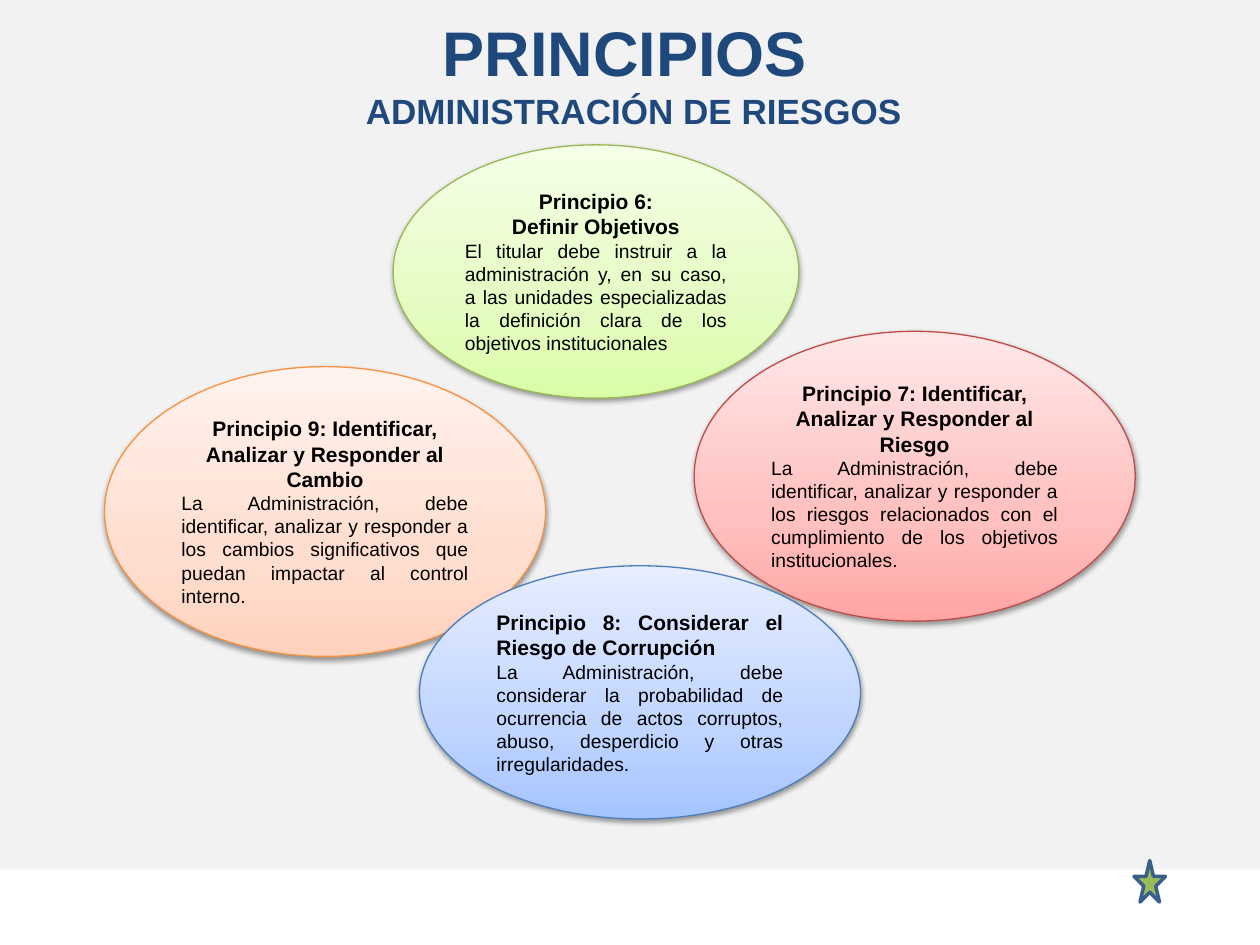
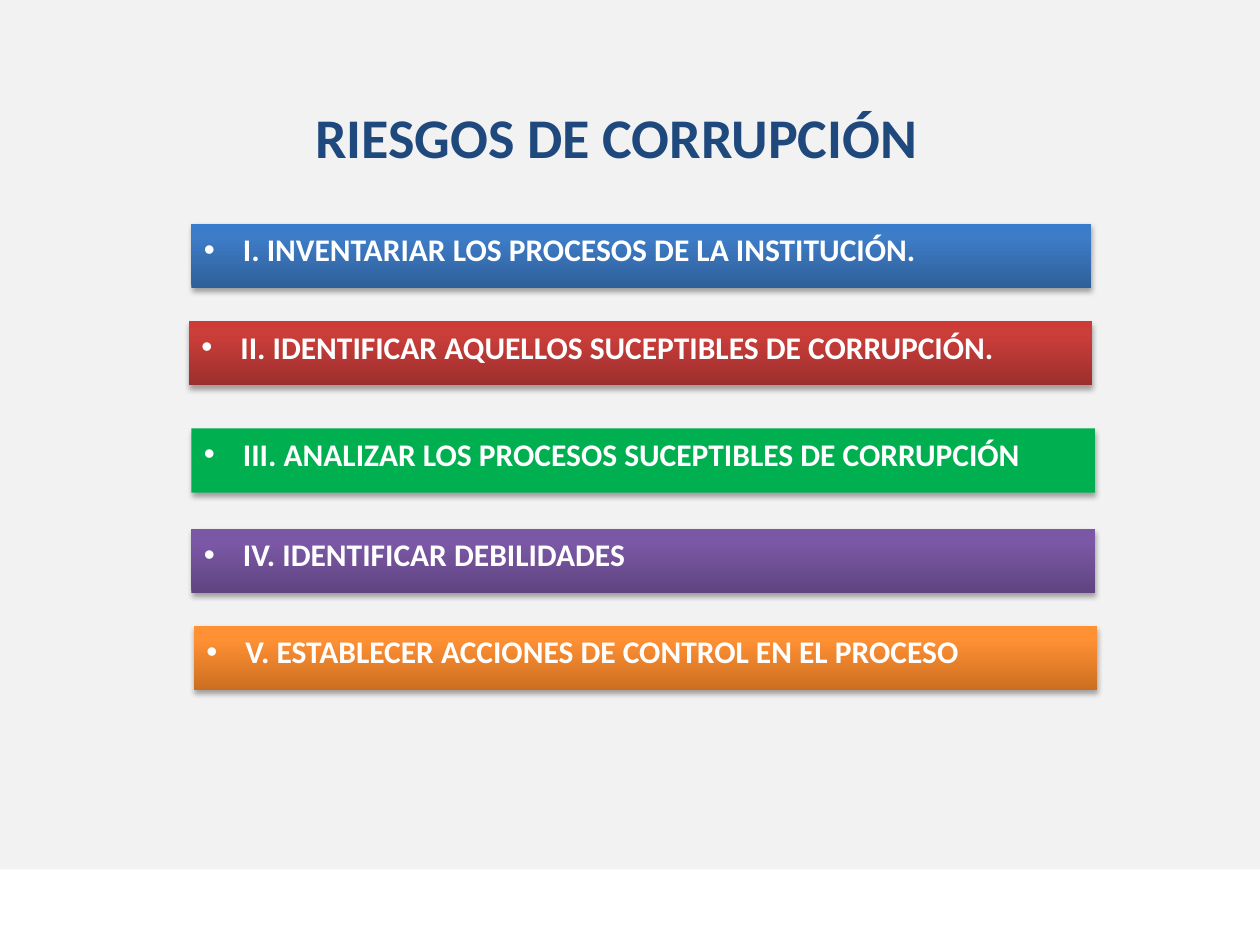
from lxml import etree
from pptx import Presentation
from pptx.dml.color import RGBColor
from pptx.enum import shapes, text
from pptx.oxml import ns
from pptx.util import Inches, Pt

COLORS = {
    "band": "F2F2F2", "title": "1F497D", "black": "000000", "white": "FFFFFF",
    "star": "9BBB59", "star_line": "3A5F8C", "green_bar": "00B050",
}
CENTER, LEFT, JUSTIFY = text.PP_ALIGN.CENTER, text.PP_ALIGN.LEFT, text.PP_ALIGN.JUSTIFY


def paint(shape, stops, shadow=None):
    """Fill with one colour or (percent, colour) stops; shadow is (opacity %, distance pt)."""
    if isinstance(stops, str):
        shape.fill.solid()
        shape.fill.fore_color.rgb = RGBColor.from_string(stops)
    else:
        shape.fill.gradient()
        shape.fill.gradient_angle = 90
        stop_list = shape.element.spPr.find(".//" + ns.qn("a:gsLst"))
        for old_stop in list(stop_list):
            stop_list.remove(old_stop)
        for percent, color in stops:
            stop = etree.SubElement(stop_list, ns.qn("a:gs"), pos=str(percent * 1000))
            etree.SubElement(stop, ns.qn("a:srgbClr"), val=color)
    shape.line.fill.background()
    shape.shadow.inherit = False
    if shadow:
        opacity, distance = shadow
        effects = shape.element.spPr.find(ns.qn("a:effectLst"))
        outer = etree.SubElement(effects, ns.qn("a:outerShdw"), blurRad=str(Pt(3.1)),
                                 dist=str(Pt(distance)), dir="5400000", rotWithShape="0")
        shade = etree.SubElement(outer, ns.qn("a:srgbClr"), val=COLORS["black"])
        etree.SubElement(shade, ns.qn("a:alpha"), val=str(opacity * 1000))


def write(shape, lines, font, color, anchor):
    """Write one paragraph for each (wording, size, bold, alignment)."""
    frame = shape.text_frame
    frame.word_wrap = True
    frame.auto_size = text.MSO_AUTO_SIZE.NONE
    frame.vertical_anchor = anchor
    for index, (wording, size, bold, alignment) in enumerate(lines):
        para = frame.add_paragraph() if index else frame.paragraphs[0]
        para.alignment = alignment
        span = para.add_run()
        span.text = wording
        span.font.name, span.font.size, span.font.bold = font, Pt(size), bold
        span.font.color.rgb = RGBColor.from_string(color)


deck = Presentation()
deck.slide_width, deck.slide_height = Inches(10), Inches(7.5)
title_only = deck.slide_layouts[5]

# Slide 1: principles
page = deck.slides.add_slide(title_only)

# The grey band belongs to the master, behind every slide
band = page.shapes.add_shape(shapes.MSO_SHAPE.RECTANGLE, 0, 0, Inches(10), Inches(6.9))
paint(band, COLORS["band"])
deck.slide_master.shapes.element.insert(2, band.element)

title = page.shapes.title
title.left, title.top, title.width, title.height = map(Inches, (0.18, 0.05, 9.7, 1.04))
write(title, [("PRINCIPIOS ", 36, True, CENTER), ("ADMINISTRACIÓN DE RIESGOS", 20, True, CENTER)],
      "Arial", COLORS["title"], text.MSO_ANCHOR.BOTTOM)

star = page.shapes.add_shape(shapes.MSO_SHAPE.STAR_5_POINT,
                             *map(Inches, (9, 6.83, 0.25, 0.33)))
paint(star, COLORS["star"])
star.line.color.rgb = RGBColor.from_string(COLORS["star_line"])
star.line.width = Pt(2)

principles = [
    ((5.51, 2.63, 3.5, 2.3), ("FFA6A5", "FFC0BF", "FFE7E7"), "BF4C48", CENTER,
     ["Principio 7: Identificar, Analizar y Responder al Riesgo"],
     "La Administración, debe identificar, analizar y responder a los riesgos "
     "relacionados con el cumplimiento de los objetivos institucionales."),
    ((0.83, 2.91, 3.5, 2.3), ("FFD2BD", "FFDED0", "FFF2ED"), "F69240", CENTER,
     ["Principio 9: Identificar, Analizar y Responder al Cambio"],
     "La Administración, debe identificar, analizar y responder a los cambios "
     "significativos que puedan impactar al control interno."),
    ((3.12, 1.15, 3.22, 2.01), ("DAFDA7", "E4FCC2", "F5FFE7"), "98B955", CENTER,
     ["Principio 6:", "Definir Objetivos"],
     "El titular debe instruir a la administración y, en su caso, a las unidades "
     "especializadas la definición clara de los objetivos institucionales"),
    ((3.33, 4.49, 3.5, 2.01), ("A4C4FF", "BFD4FF", "E6EEFF"), "4B7EBC", JUSTIFY,
     ["Principio 8: Considerar el Riesgo de Corrupción"],
     "La Administración, debe considerar la probabilidad de ocurrencia de actos "
     "corruptos, abuso, desperdicio y otras irregularidades."),
]
for place, tints, outline, alignment, headings, body in principles:
    oval = page.shapes.add_shape(shapes.MSO_SHAPE.OVAL, *map(Inches, place))
    paint(oval, list(zip((0, 35, 100), tints)), (38, 1.6))
    oval.line.color.rgb = RGBColor.from_string(outline)
    oval.line.width = Pt(0.75)
    lines = [(heading, 12, True, alignment) for heading in headings]
    write(oval, lines + [(body, 11, False, JUSTIFY)], "Arial", COLORS["black"],
          text.MSO_ANCHOR.MIDDLE)

# Slide 2: corruption risks
page = deck.slides.add_slide(title_only)
title = page.shapes.title
title.left, title.top, title.width, title.height = map(Inches, (2.4, 0.5, 7.96, 0.83))
write(title, [("RIESGOS DE CORRUPCIÓN", 32, True, LEFT)], "Calibri", COLORS["title"],
      text.MSO_ANCHOR.TOP)
title.text_frame.paragraphs[0].line_spacing = 1.5

steps = [
    (1.52, 1.78, 7.14, ("2F5F99", "3D7CC7", "3A7CCB"),
     "I. INVENTARIAR LOS PROCESOS DE LA INSTITUCIÓN."),
    (1.5, 2.55, 7.17, ("9C2F2D", "CB3E3A", "CE3B37"),
     "II. IDENTIFICAR AQUELLOS SUCEPTIBLES DE CORRUPCIÓN."),
    (1.52, 3.4, 7.17, COLORS["green_bar"],
     "III. ANALIZAR LOS PROCESOS SUCEPTIBLES DE CORRUPCIÓN"),
    (1.52, 4.2, 7.17, ("5F4480", "7B58A6", "7C57A8"), "IV. IDENTIFICAR DEBILIDADES"),
    (1.54, 4.97, 7.17, ("CC6E20", "FF9034", "FF9136"),
     "V. ESTABLECER ACCIONES DE CONTROL EN EL PROCESO"),
]
for left, top, width, tints, wording in steps:
    bar = page.shapes.add_shape(shapes.MSO_SHAPE.RECTANGLE,
                                *map(Inches, (left, top, width, 0.51)))
    paint(bar, tints if isinstance(tints, str) else list(zip((0, 80, 100), tints)), (35, 1.8))
    write(bar, [(wording, 18, True, LEFT)], "Calibri", COLORS["white"], text.MSO_ANCHOR.TOP)
    properties = bar.text_frame.paragraphs[0]._p.get_or_add_pPr()
    properties.set("marL", str(Inches(0.31)))
    properties.set("indent", str(-Inches(0.31)))
    etree.SubElement(properties, ns.qn("a:buFont"), typeface="Arial")
    etree.SubElement(properties, ns.qn("a:buChar"), char="•")

deck.save("out.pptx")
